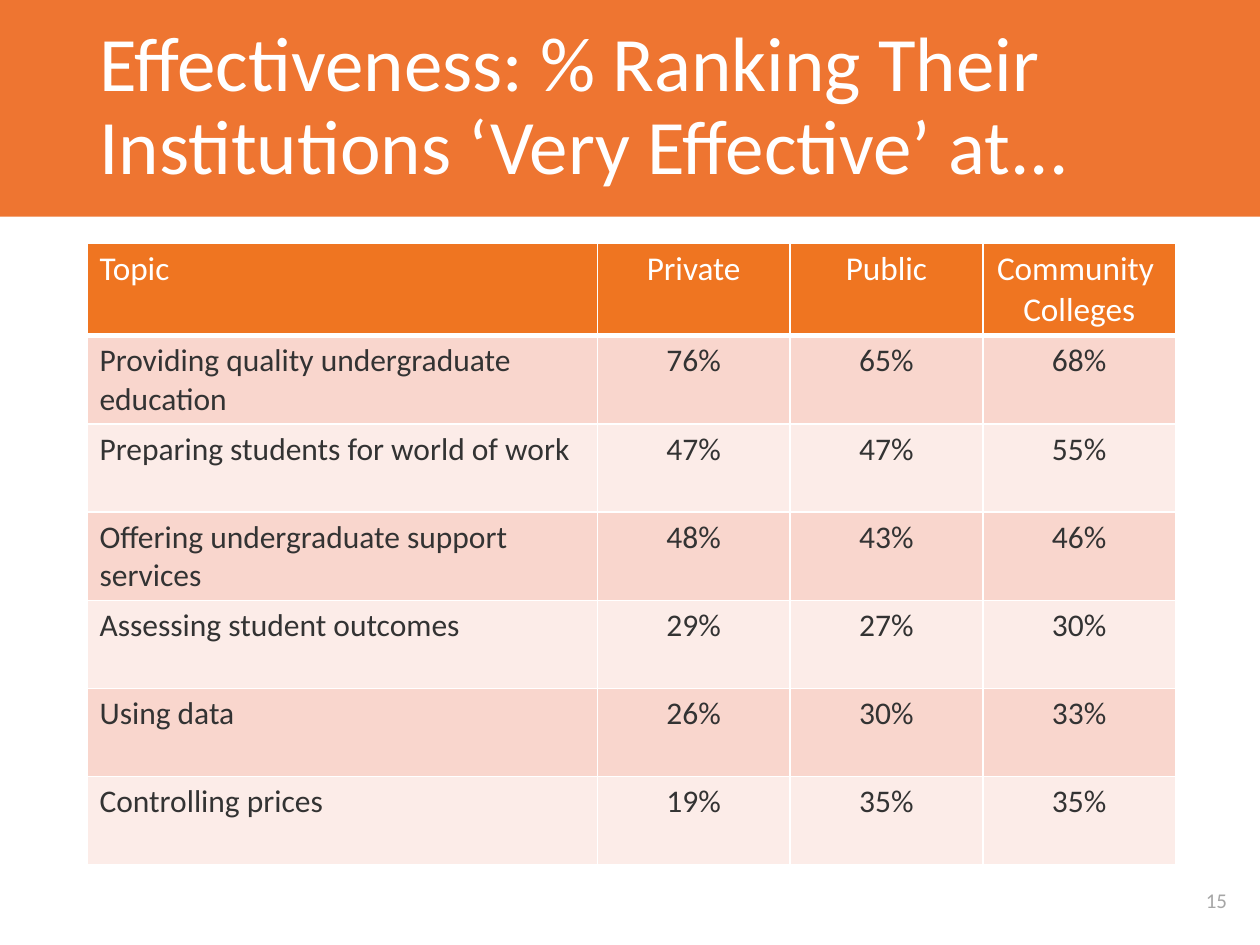
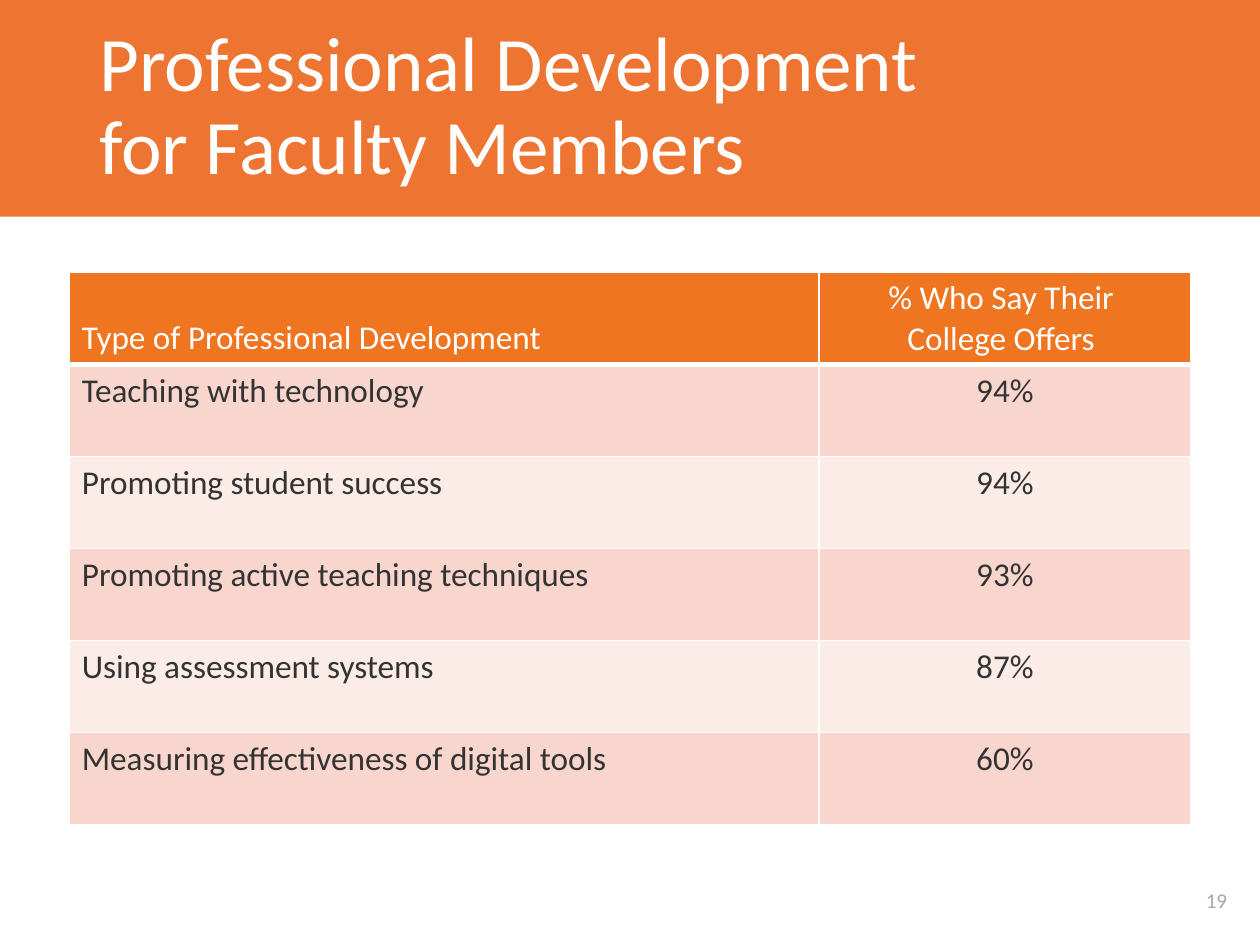
from lxml.etree import SubElement
from pptx import Presentation
from pptx.dml.color import RGBColor
from pptx.enum.shapes import MSO_SHAPE
from pptx.enum.text import MSO_ANCHOR as Anchor, PP_ALIGN as Align
from pptx.oxml.ns import qn
from pptx.util import Inches, Pt

COLORS = {
    "band": "EE7531",
    "header": "EF7521",
    "odd_row": "F9D6CD",
    "even_row": "FCECE8",
    "white": "FFFFFF",
    "body": "333333",
    "number": "A6A6A6",
}
FONT = "Calibri"
HEADER_SIZE = 19

SLIDES = [
    {
        "number": "15",
        "title": "Effectiveness: % Ranking Their Institutions ‘Very Effective’ at...",
        "left": 0.69, "top": 1.93, "columns": [4.05, 1.53, 1.53, 1.53], "row_height": 0.7,
        "body_size": 18, "header_anchor": Anchor.TOP,
        "rows": [
            ("Topic", "Private", "Public", "Community \nColleges"),
            ("Providing quality undergraduate education", "76%", "65%", "68%"),
            ("Preparing students for world of work", "47%", "47%", "55%"),
            ("Offering undergraduate support services", "48%", "43%", "46%"),
            ("Assessing student outcomes", "29%", "27%", "30%"),
            ("Using data", "26%", "30%", "33%"),
            ("Controlling prices", "19%", "35%", "35%"),
        ],
    },
    {
        "number": "19",
        "title": "Professional Development \nfor Faculty Members",
        "left": 0.55, "top": 2.16, "columns": [5.95, 2.95], "row_height": 0.73,
        "body_size": 19, "header_anchor": Anchor.BOTTOM,
        "rows": [
            ("Type of Professional Development", "% Who Say Their \nCollege Offers "),
            ("Teaching with technology", "94%"),
            ("Promoting student success", "94%"),
            ("Promoting active teaching techniques", "93%"),
            ("Using assessment systems", "87%"),
            ("Measuring effectiveness of digital tools", "60%"),
        ],
    },
]


def color(name):
    return RGBColor.from_string(COLORS[name])


def write(text_frame, text, size, fill, align=Align.LEFT, spacing=None):
    """Put one formatted paragraph in a frame; a newline becomes a line break."""
    paragraph = text_frame.paragraphs[0]
    paragraph.text = text
    paragraph.alignment = align
    paragraph.line_spacing = spacing
    for run in paragraph.runs:
        run.font.name = FONT
        run.font.size = Pt(size)
        run.font.bold = False
        run.font.color.rgb = color(fill)


def add_text(slide, box, text, **style):
    shape = slide.shapes.add_textbox(*map(Inches, box))
    shape.text_frame.word_wrap = True
    shape.text_frame.vertical_anchor = Anchor.MIDDLE
    write(shape.text_frame, text, **style)


def add_frame(slide, title, number):
    """Add the title band, slide number and title shared by the slides."""
    band = slide.shapes.add_shape(MSO_SHAPE.RECTANGLE, *map(Inches, (-0.01, 0, 10.02, 1.72)))
    band.shadow.inherit = False
    band.fill.solid()
    band.fill.fore_color.rgb = color("band")
    band.line.fill.background()
    add_text(slide, (9.31, 6.95, 0.69, 0.39), number, size=12, fill="number", align=Align.CENTER)
    add_text(slide, (0.69, 0, 8.62, 1.71), title, size=44, fill="white", spacing=0.9)


def add_borders(cell, bottom_width):
    properties = cell._tc.get_or_add_tcPr()
    for side, width in (("L", 1), ("R", 1), ("T", 1), ("B", bottom_width)):
        line = SubElement(properties, qn(f"a:ln{side}"), w=str(Pt(width)))
        SubElement(SubElement(line, qn("a:solidFill")), qn("a:srgbClr"), val=COLORS["white"])


def add_data_table(slide, content):
    rows, columns = content["rows"], content["columns"]
    height = content["row_height"]
    box = (content["left"], content["top"], sum(columns), height * len(rows))
    table = slide.shapes.add_table(len(rows), len(columns), *map(Inches, box)).table
    for column, width in zip(table.columns, columns):
        column.width = Inches(width)
    for row_index, values in enumerate(rows):
        table.rows[row_index].height = Inches(height)
        is_header = row_index == 0
        row_fill = "header" if is_header else ("even_row", "odd_row")[row_index % 2]
        for column_index, value in enumerate(values):
            cell = table.cell(row_index, column_index)
            add_borders(cell, 3 if is_header else 1)
            cell.fill.solid()
            cell.fill.fore_color.rgb = color(row_fill)
            cell.vertical_anchor = content["header_anchor"] if is_header else Anchor.TOP
            write(
                cell.text_frame, value,
                size=HEADER_SIZE if is_header else content["body_size"],
                fill="white" if is_header else "body",
                align=Align.CENTER if column_index else Align.LEFT,
            )


def main():
    presentation = Presentation()
    presentation.slide_width = Inches(10)
    presentation.slide_height = Inches(7.5)
    for content in SLIDES:
        slide = presentation.slides.add_slide(presentation.slide_layouts[6])
        add_frame(slide, content["title"], content["number"])
        add_data_table(slide, content)
    presentation.save("out.pptx")


if __name__ == "__main__":
    main()
